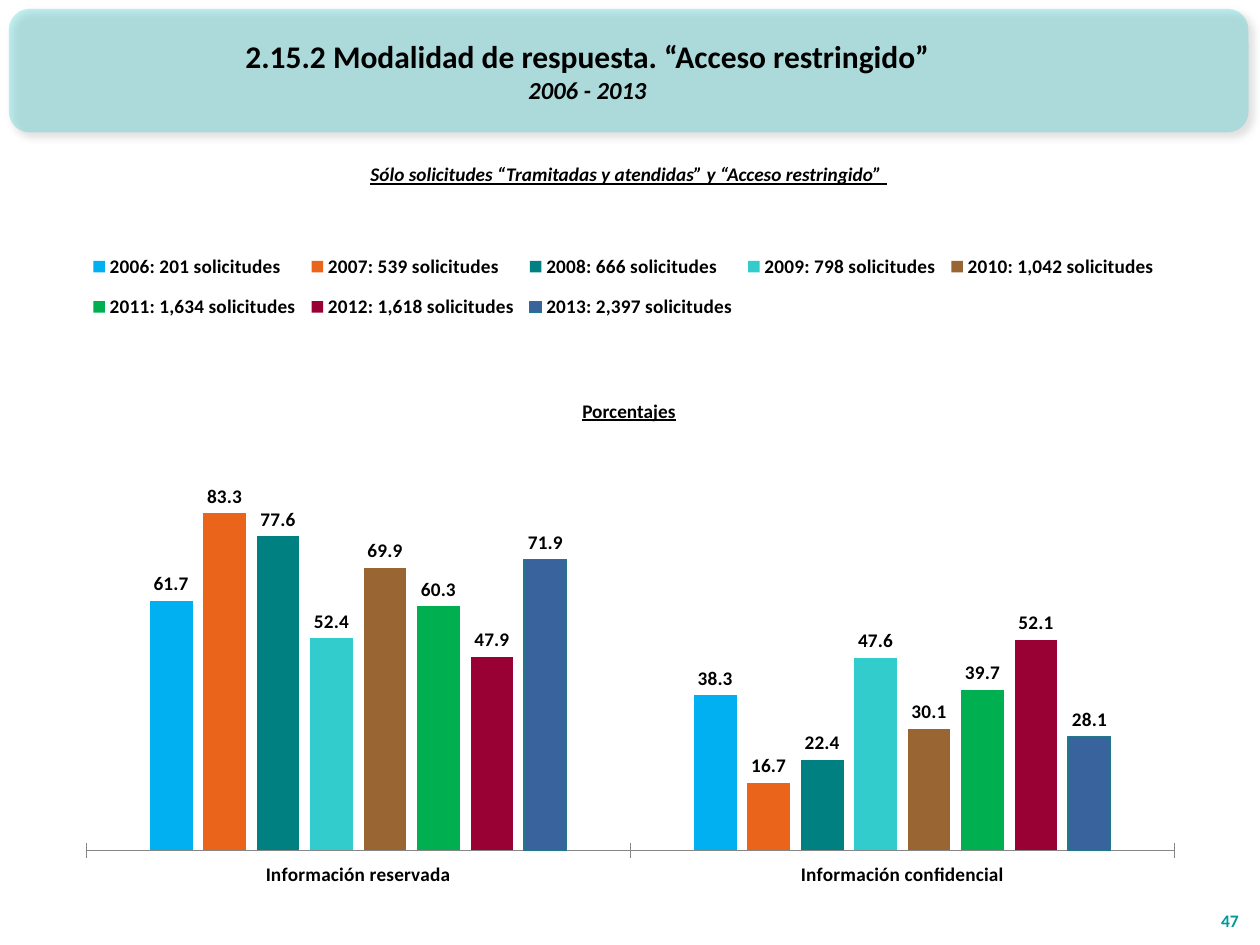
from lxml import etree
from pptx import Presentation
from pptx.chart.data import CategoryChartData
from pptx.dml.color import RGBColor
from pptx.enum.chart import XL_CHART_TYPE, XL_LABEL_POSITION, XL_LEGEND_POSITION, XL_TICK_MARK
from pptx.enum.shapes import MSO_SHAPE
from pptx.enum.text import MSO_ANCHOR, PP_ALIGN
from pptx.oxml import parse_xml
from pptx.oxml.ns import nsdecls, qn
from pptx.util import Cm, Pt

COLUMNS = XL_CHART_TYPE.COLUMN_CLUSTERED
OUTSIDE = XL_LABEL_POSITION.OUTSIDE_END
LEGEND_TOP = XL_LEGEND_POSITION.TOP
TICK_CROSS, TICK_NONE = XL_TICK_MARK.CROSS, XL_TICK_MARK.NONE
ROUNDED = MSO_SHAPE.ROUNDED_RECTANGLE
TOP, MIDDLE, BOTTOM = MSO_ANCHOR.TOP, MSO_ANCHOR.MIDDLE, MSO_ANCHOR.BOTTOM
CENTER, RIGHT = PP_ALIGN.CENTER, PP_ALIGN.RIGHT

FONT = "Calibri"
BLACK = "000000"
CATEGORIES = ["Información reservada", "Información confidencial"]
SERIES = [
    ("2006: 201 solicitudes", (61.7, 38.3), "00B0F0"),
    ("2007: 539 solicitudes", (83.3, 16.7), "EB641B"),
    ("2008: 666 solicitudes", (77.6, 22.4), "008080"),
    ("2009: 798 solicitudes", (52.4, 47.6), "33CCCC"),
    ("2010: 1,042 solicitudes", (69.9, 30.1), "996633"),
    ("2011: 1,634 solicitudes", (60.3, 39.7), "00B050"),
    ("2012: 1,618 solicitudes", (47.9, 52.1), "990033"),
    ("2013: 2,397 solicitudes", (71.9, 28.1), "39639D"),
]


def rgb(value):
    """Turn a hex string into a colour."""
    return RGBColor.from_string(value)


def style_font(font, size, color=BLACK, bold=True, italic=False, underline=False):
    """Apply the slide's typeface and the given format to a font."""
    font.name, font.size = FONT, Pt(size)
    font.bold, font.italic, font.underline = bold, italic, underline
    font.color.rgb = rgb(color)


def add_line(tf, text, align=CENTER, **fmt):
    """Write one formatted paragraph into a text frame."""
    p = tf.paragraphs[0]
    if p.runs:
        p = tf.add_paragraph()
    p.alignment = align
    r = p.add_run()
    r.text = text
    style_font(r.font, **fmt)


def add_frame(slide, x, y, w, h, anchor=TOP):
    """Add a wrapping text box and return its text frame."""
    tf = slide.shapes.add_textbox(Cm(x), Cm(y), Cm(w), Cm(h)).text_frame
    tf.word_wrap = True
    tf.vertical_anchor = anchor
    return tf


def add_header(slide, x, y, w, h):
    """Add the translucent banner with title and period."""
    sp = slide.shapes.add_shape(ROUNDED, Cm(x), Cm(y), Cm(w), Cm(h))
    sp.fill.solid()
    sp.fill.fore_color.rgb = rgb("33CCCC")
    sp.line.fill.background()
    color = sp.fill._xPr.find(qn("a:solidFill"))[0]
    etree.SubElement(color, qn("a:alpha"), val="30000")
    sp._element.spPr.append(parse_xml(
        f'<a:effectLst {nsdecls("a")}><a:outerShdw blurRad="50800" dist="38100" '
        'dir="2700000" algn="tl" rotWithShape="0"><a:srgbClr val="000000">'
        '<a:alpha val="40000"/></a:srgbClr></a:outerShdw></a:effectLst>'))
    tf = add_frame(slide, x + 0.02, y + 0.05, w - 1.7, h - 0.1, MIDDLE)
    add_line(tf, "2.15.2 Modalidad de respuesta. “Acceso restringido”", size=18)
    add_line(tf, "2006 - 2013", size=14, italic=True)


def set_layout(parent, index, x, y, w, h, target=""):
    """Fix the place of a chart part as fractions of the chart."""
    for old in parent.findall(qn("c:layout")):
        parent.remove(old)
    inner = f'<c:layoutTarget val="{target}"/>' if target else ""
    modes = '<c:xMode val="edge"/><c:yMode val="edge"/>'
    sizes = f'<c:x val="{x}"/><c:y val="{y}"/><c:w val="{w}"/><c:h val="{h}"/>'
    parent.insert(index, parse_xml(
        f'<c:layout {nsdecls("c")}><c:manualLayout>{inner}{modes}{sizes}'
        '</c:manualLayout></c:layout>'))


def style_series(series, color):
    """Colour one series and label its columns."""
    series.format.fill.solid()
    series.format.fill.fore_color.rgb = rgb(color)
    series.invert_if_negative = False
    labels = series.data_labels
    labels.show_value = True
    labels.number_format, labels.number_format_is_linked = "0.0", False
    labels.position = OUTSIDE
    style_font(labels.font, 11)


def add_percent_chart(slide, x, y, w, h):
    """Add the column chart of percentages with its heading."""
    data = CategoryChartData(number_format="0.0")
    data.categories = CATEGORIES
    for name, values, _ in SERIES:
        data.add_series(name, values)
    chart = slide.shapes.add_chart(COLUMNS, Cm(x), Cm(y), Cm(w), Cm(h), data).chart
    style_font(chart.font, 11)
    chart.has_title = False
    plot = chart.plots[0]
    plot.gap_width, plot.overlap, plot.vary_by_categories = 297, -25, False
    for series, (_, _, color) in zip(plot.series, SERIES):
        style_series(series, color)
    last_line = plot.series[-1].format.line
    last_line.color.rgb, last_line.width = rgb("21788D"), Pt(0.75)

    axis = chart.value_axis
    axis.minimum_scale, axis.maximum_scale = 0, 105
    axis.has_major_gridlines = axis.visible = False
    axis = chart.category_axis
    axis.major_tick_mark, axis.minor_tick_mark = TICK_CROSS, TICK_NONE
    axis.format.line.color.rgb = rgb("868686")
    style_font(axis.tick_labels.font, 11)

    chart.has_legend = True
    legend = chart.legend
    legend.position, legend.include_in_layout = LEGEND_TOP, False
    style_font(legend.font, 11)
    set_layout(legend._element, 1, 0.01, 0.02, 0.97, 0.14)
    plot_area = chart._chartSpace.chart.plotArea
    set_layout(plot_area, 0, 0.012, 0.29, 0.978, 0.612, "inner")

    tf = add_frame(slide, x + w / 2 - 1.77, y + 3.4, 3.53, 0.74)
    add_line(tf, "Porcentajes", size=11, underline=True)


def add_subtitle(slide, x, y, w, h):
    """Add the note on which requests are counted."""
    tf = add_frame(slide, x, y, w, h)
    add_line(tf, "Sólo solicitudes “Tramitadas y atendidas” y “Acceso restringido” ",
             size=11, italic=True, underline=True)


def add_page_number(slide, x, y, w, h):
    """Add the page number."""
    tf = add_frame(slide, x, y, w, h, BOTTOM)
    add_line(tf, "47", align=RIGHT, size=10, color="009999")


def main():
    """Build and save the slide."""
    prs = Presentation()
    prs.slide_width, prs.slide_height = Cm(25.4), Cm(19.05)
    slide = prs.slides.add_slide(prs.slide_layouts[6])
    add_header(slide, 0.18, 0.18, 24.99, 2.49)
    add_percent_chart(slide, 1.47, 4.52, 22.43, 14)
    add_page_number(slide, 24.2, 17.88, 1.02, 1.02)
    add_subtitle(slide, 4.65, 3.15, 16.05, 0.74)
    prs.save("out.pptx")


if __name__ == "__main__":
    main()
